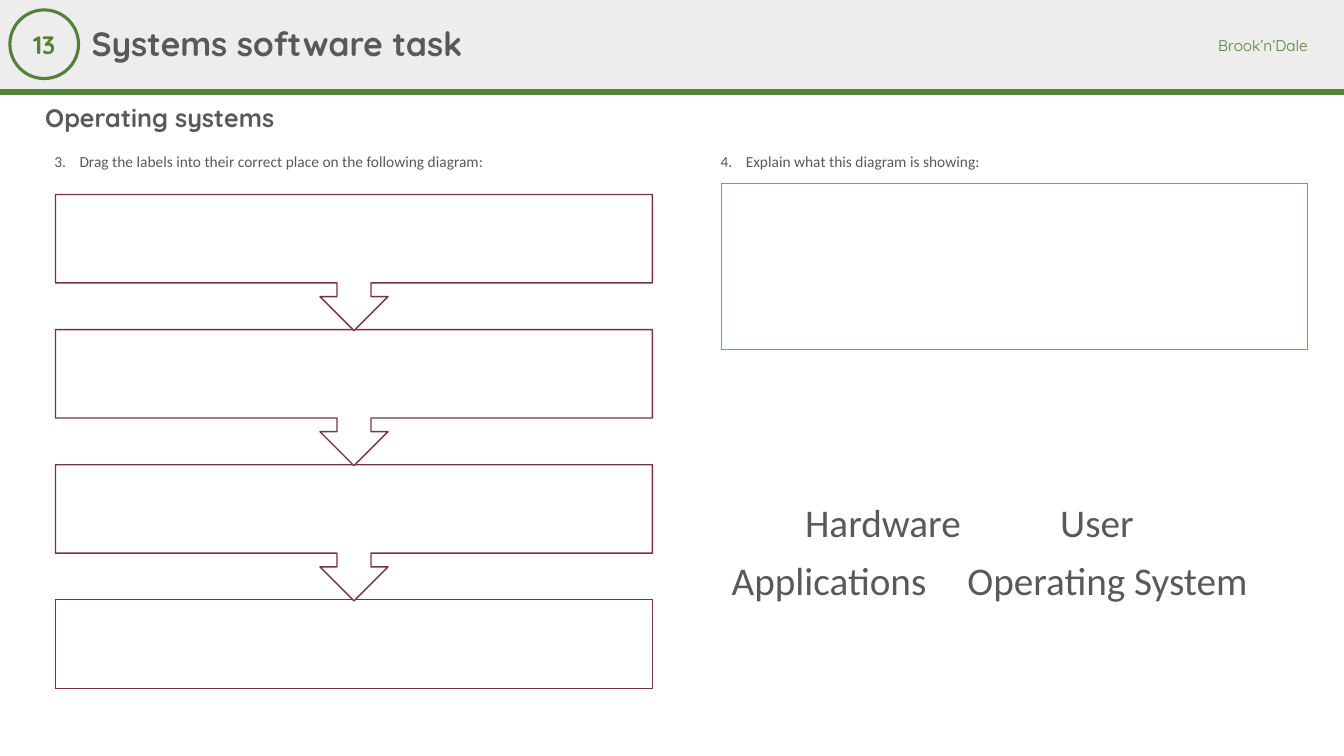
from lxml import etree
from pptx import Presentation
from pptx.dml.color import RGBColor
from pptx.enum.shapes import MSO_CONNECTOR as Connector, MSO_SHAPE as Shape
from pptx.enum.text import MSO_ANCHOR as Anchor, PP_ALIGN as Align
from pptx.oxml.ns import qn
from pptx.util import Cm, Pt

GREEN, GREY, PLUM = "538135", "595959", "76304C"
HEADING = {"name": "Quicksand", "bold": True}
BODY = {"name": "Calibri", "bold": False}


def paint(target, colour):
    if hasattr(target, "solid"):
        target.solid()
        target = target.fore_color
    target.rgb = RGBColor.from_string(colour)


def write(box, text, size, colour, style, start=None, **frame_format):
    frame = box.text_frame
    for name, value in {"word_wrap": True, **frame_format}.items():
        setattr(frame, name, value)
    para = frame.paragraphs[0]
    if start:
        props = para._p.get_or_add_pPr()
        props.set("marL", str(Cm(0.635)))
        props.set("indent", str(-Cm(0.635)))
        etree.SubElement(props, qn("a:buFont"), typeface="+mj-lt")
        etree.SubElement(props, qn("a:buAutoNum"), type="arabicPeriod", startAt=str(start))
    span = para.add_run()
    span.text = text
    for name, value in {"size": Pt(size), **style}.items():
        setattr(span.font, name, value)
    paint(span.font.color, colour)
    return para


deck = Presentation()
deck.slide_width, deck.slide_height = Cm(33.87), Cm(19.05)
page = deck.slides.add_slide(deck.slide_layouts[6])
shapes = page.shapes

# Header band, rule and publisher name
band = shapes.add_shape(Shape.RECTANGLE, 0, 0, deck.slide_width, Cm(2.31))
band.shadow.inherit = False
paint(band.fill, "EDEDED")
band.line.fill.background()

rule = shapes.add_connector(Connector.STRAIGHT, 0, Cm(2.31), deck.slide_width, Cm(2.31))
rule.line.width = Pt(4.5)
paint(rule.line.fill, GREEN)
etree.SubElement(rule._element.spPr, qn("a:effectLst"))

publisher = shapes.add_textbox(Cm(30.45), Cm(0.79), Cm(3.1), Cm(0.74))
write(publisher, "Brook’n’Dale", 11, GREEN, {**HEADING, "bold": False}, word_wrap=False)

# Page number badge
badge = shapes.add_shape(Shape.OVAL, Cm(0.25), Cm(0.25), Cm(1.73), Cm(1.73))
badge.shadow.inherit = False
badge.fill.background()
badge.line.width = Pt(2.25)
paint(badge.line.fill, GREEN)
number = write(badge, "13", 18, GREEN, HEADING, word_wrap=False, vertical_anchor=Anchor.MIDDLE)
number.alignment = Align.CENTER

# Headings
for text, size, left, top, width, height in [
    ("Operating systems", 18, 0.89, 2.51, 14.5, 1.02),
    ("Systems software task", 24, 2.06, 0.23, 26.19, 1.85),
]:
    box = shapes.add_textbox(Cm(left), Cm(top), Cm(width), Cm(height))
    para = write(box, text, size, GREY, HEADING, vertical_anchor=Anchor.MIDDLE)
    para.line_spacing = 0.9

# Numbered questions
for start, text, left, width in [
    (3, "Drag the labels into their correct place on the following diagram:", 1.12, 18.92),
    (4, "Explain what this diagram is showing:", 17.91, 14.4),
]:
    box = shapes.add_textbox(Cm(left), Cm(3.71), Cm(width), Cm(0.74))
    write(box, text, 11, GREY, BODY, start)

# Layer diagram, stacked from the bottom so each arrow tip overlaps the next layer
for level in reversed(range(4)):
    is_last = level == 3
    kind = Shape.RECTANGLE if is_last else Shape.UP_ARROW_CALLOUT
    layer = shapes.add_shape(kind, Cm(1.4), Cm(4.9 + 3.405 * level),
                             Cm(15.04), Cm(2.24 if is_last else 3.43))
    layer.rotation = 0 if is_last else 180
    layer.shadow.inherit = False
    paint(layer.fill, "FFFFFF")
    layer.line.width = Pt(1)
    paint(layer.line.fill, PLUM)

# Answer box
answer = shapes.add_shape(Shape.RECTANGLE, Cm(18.19), Cm(4.62), Cm(14.76), Cm(4.19))
answer.shadow.inherit = False
answer.fill.background()
answer.line.width = Pt(1)
paint(answer.line.fill, "70AD47")

# Labels to drag
for text, left, top, width in [
    ("User", 26.47, 12.42, 2.39),
    ("Applications", 18.19, 13.9, 5.49),
    ("Operating System", 24.13, 13.9, 7.65),
    ("Hardware", 20.04, 12.42, 4.47),
]:
    label = shapes.add_textbox(Cm(left), Cm(top), Cm(width), Cm(1.45))
    write(label, text, 28, GREY, BODY, word_wrap=False)

deck.save("out.pptx")
